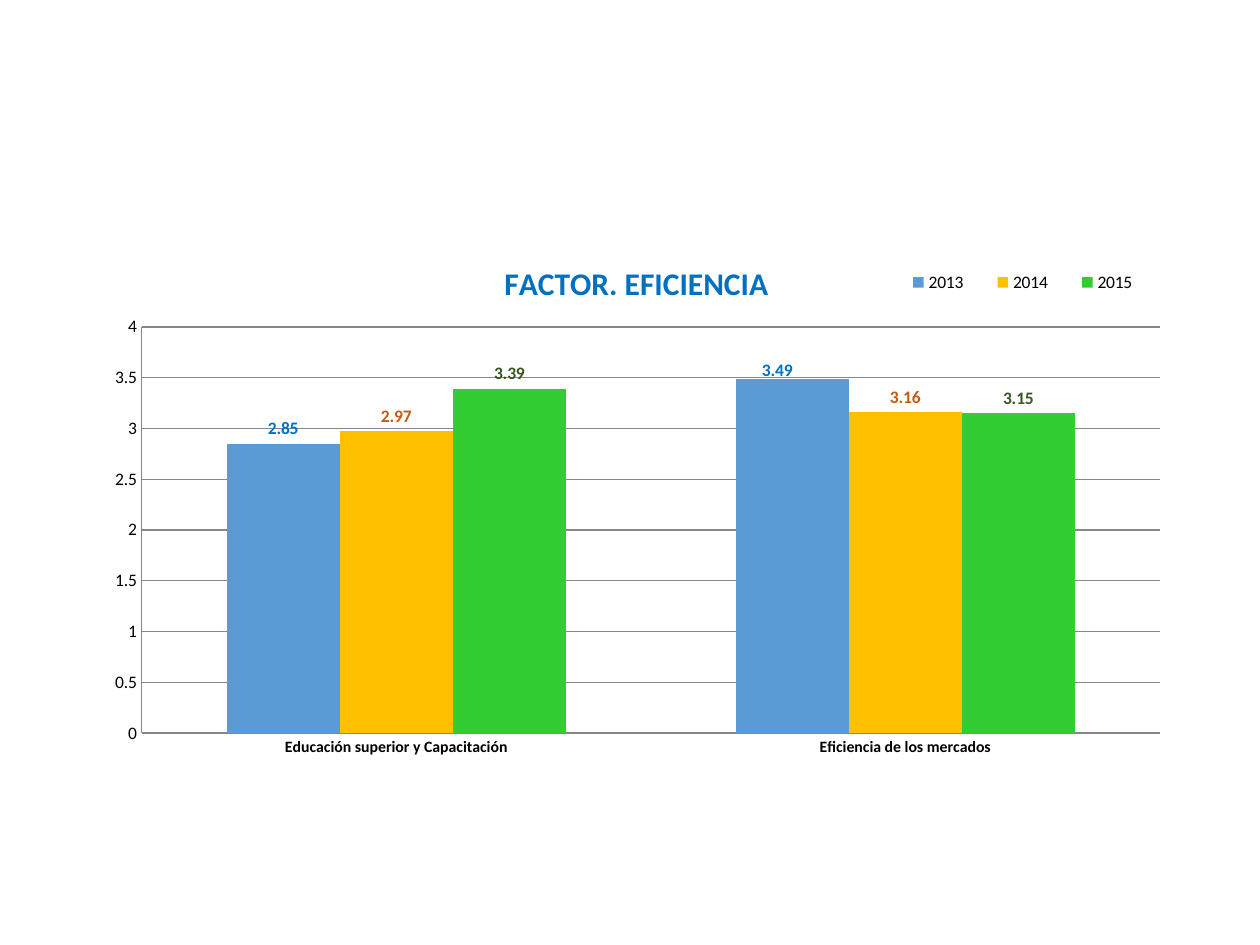
from dataclasses import dataclass
from typing import Any

import pptx
import pptx.chart.data
import pptx.dml.color
import pptx.enum.chart
import pptx.oxml
import pptx.oxml.ns
import pptx.util
from pptx.util import Inches

FONT = "Calibri"
GRID = "878787"
CATEGORIES = ["Educación superior y Capacitación", "Eficiencia de los mercados"]


@dataclass
class Year:
    name: str
    values: tuple[float, float]
    fill: str
    label: str


YEARS = [
    Year("2013", (2.85, 3.49), "5B9BD5", "0070C0"),
    Year("2014", (2.97, 3.16), "FFC000", "C55A11"),
    Year("2015", (3.39, 3.15), "33CC33", "385723"),
]


def rgb(color: str) -> pptx.dml.color.RGBColor:
    return pptx.dml.color.RGBColor.from_string(color)


def format_font(font: Any, color: str, size: float = 10, bold: bool = False) -> None:
    values = {"name": FONT, "size": pptx.util.Pt(size), "bold": bold}
    for attribute, value in values.items():
        setattr(font, attribute, value)
    font.color.rgb = rgb(color)


def place(parent: Any, after: str | None, **layout: float | str) -> None:
    """Give a chart part a manual layout, put after the named child or first."""
    for old in parent.findall(pptx.oxml.ns.qn("c:layout")):
        parent.remove(old)
    parts = "".join(f'<c:{tag} val="{value}"/>' for tag, value in layout.items())
    element = pptx.oxml.parse_xml(
        f'<c:layout {pptx.oxml.ns.nsdecls("c")}>'
        f"<c:manualLayout>{parts}</c:manualLayout></c:layout>"
    )
    if after is None:
        parent.insert(0, element)
    else:
        parent.find(pptx.oxml.ns.qn(after)).addnext(element)


def format_line(line: Any) -> None:
    line.color.rgb = rgb(GRID)
    line.width = pptx.util.Pt(0.75)


def format_title(chart: Any) -> None:
    chart.has_title = True
    frame = chart.chart_title.text_frame
    frame.text = "FACTOR. EFICIENCIA"
    format_font(frame.paragraphs[0].runs[0].font, "0070C0", 18, True)
    place(chart.chart_title._element, "c:tx", xMode="edge", yMode="edge", x=0.385, y=0.043)


def format_legend(chart: Any) -> None:
    chart.has_legend = True
    legend = chart.legend
    legend.position = pptx.enum.chart.XL_LEGEND_POSITION.RIGHT
    legend.include_in_layout = False
    format_font(legend.font, "000000")
    place(legend._element, "c:legendPos", xMode="edge", yMode="edge",
          x=0.72, y=0.06, w=0.24, h=0.06)


def format_axes(chart: Any) -> None:
    for axis in (chart.category_axis, chart.value_axis):
        axis.major_tick_mark = pptx.enum.chart.XL_TICK_MARK.NONE
        axis.minor_tick_mark = pptx.enum.chart.XL_TICK_MARK.NONE
        format_line(axis.format.line)
    format_font(chart.category_axis.tick_labels.font, "000000", 9, True)
    values = chart.value_axis
    values.minimum_scale, values.maximum_scale, values.major_unit = 0, 4, 0.5
    format_font(values.tick_labels.font, "000000")
    values.has_major_gridlines = True
    format_line(values.major_gridlines.format.line)


def format_series(series: Any, year: Year) -> None:
    series.format.fill.solid()
    series.format.fill.fore_color.rgb = rgb(year.fill)
    series.invert_if_negative = False
    labels = series.data_labels
    labels.show_value = True
    labels.position = pptx.enum.chart.XL_LABEL_POSITION.OUTSIDE_END
    format_font(labels.font, year.label, bold=True)


def nudge_label(series: Any, point: int, year: Year, x: float, y: float) -> None:
    label = series.points[point].data_label
    format_font(label.font, year.label, bold=True)
    label.position = pptx.enum.chart.XL_LABEL_POSITION.OUTSIDE_END
    entry = series.data_labels._element.find(pptx.oxml.ns.qn("c:dLbl"))
    place(entry, "c:idx", x=x, y=y)


def add_efficiency_chart(slide: Any) -> None:
    data = pptx.chart.data.CategoryChartData()
    data.categories = CATEGORIES
    for year in YEARS:
        data.add_series(year.name, year.values)
    chart = slide.shapes.add_chart(
        pptx.enum.chart.XL_CHART_TYPE.COLUMN_CLUSTERED,
        Inches(0.44), Inches(1.83), Inches(9.14), Inches(4.58), data,
    ).chart
    format_font(chart.font, "000000")
    format_title(chart)
    format_legend(chart)
    format_axes(chart)
    plot = chart.plots[0]
    plot.gap_width, plot.overlap, plot.vary_by_categories = 150, 0, False
    for series, year in zip(plot.series, YEARS):
        format_series(series, year)
    nudge_label(plot.series[0], 1, YEARS[0], -0.013, 0.012)
    plot_area = chart._chartSpace.chart.plotArea
    place(plot_area, None, layoutTarget="inner", xMode="edge", yMode="edge",
          x=0.075, y=0.167, w=0.884, h=0.704)


def main() -> None:
    deck = pptx.Presentation()
    deck.slide_width, deck.slide_height = Inches(10), Inches(7.5)
    add_efficiency_chart(deck.slides.add_slide(deck.slide_layouts[6]))
    deck.save("out.pptx")


if __name__ == "__main__":
    main()
